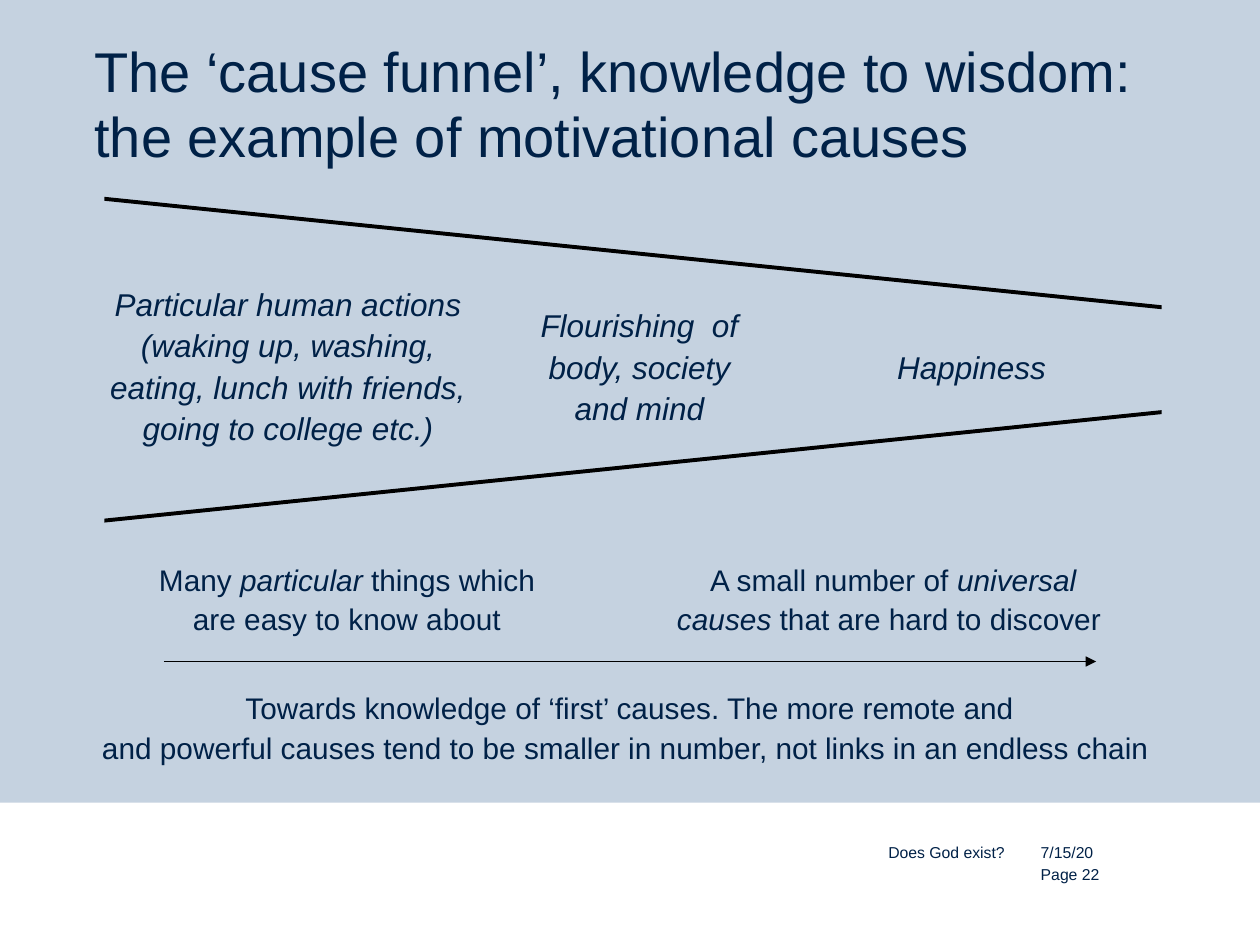
from dataclasses import dataclass

from lxml import etree
from pptx import Presentation
from pptx import util as u
from pptx.dml.color import RGBColor
from pptx.enum import shapes, text
from pptx.oxml import ns

NAVY = RGBColor(0x00, 0x21, 0x47)
PALE_BLUE = RGBColor(0xC5, 0xD2, 0xE0)
WHITE = RGBColor(0xFF, 0xFF, 0xFF)
BLACK = RGBColor(0x00, 0x00, 0x00)

Run = tuple[str, bool]  # wording, italic


@dataclass
class Label:
    """Centred text with default margins."""
    left: float
    top: float
    width: float
    height: float
    size: float
    runs: list[Run]


@dataclass
class PlainText:
    """Left-aligned text without margins, at a fixed line pitch in points."""
    left: float
    top: float
    width: float
    height: float
    size: float
    pitch: float
    wording: str


@dataclass
class Panel:
    left: float
    top: float
    width: float
    height: float
    color: RGBColor


FOOTER_BAND = Panel(0, 6.37, 10, 1.13, WHITE)

# Panels that hide the upright ends of the funnel outline
FUNNEL_ENDS = [
    Panel(9.22, 2.18, 0.19, 1.31, PALE_BLUE),
    Panel(0.67, 1.39, 0.16, 3.7, PALE_BLUE),
]

FUNNEL_CORNERS = [(0.75, 4.14), (9.33, 3.26), (9.33, 2.45), (0.75, 1.57)]

LABELS = [
    Label(0.67, 2.18, 3.23, 1.43, 18, [
        ("Particular human actions (waking up, washing, eating, "
         "lunch with friends, going to college etc.)", True)]),
    Label(4.05, 2.35, 2.05, 1.1, 18,
          [("Flourishing  of body, society and mind", True)]),
    Label(6.57, 2.68, 2.28, 0.43, 18, [("Happiness", True)]),
    Label(1.14, 4.38, 3.23, 0.73, 17, [
        ("Many ", False), ("particular", True),
        (" things which are easy to know about", False)]),
    Label(5.16, 4.38, 3.86, 0.73, 17, [
        ("A small number of ", False), ("universal causes", True),
        (" that are hard to discover ", False)]),
    Label(0.67, 5.4, 8.66, 0.73, 17, [
        ("Towards knowledge of ‘first’ causes. The more remote and\v"
         "and powerful causes tend to be smaller in number, "
         "not links in an endless chain ", False)]),
]

PLAIN_TEXTS = [
    PlainText(0.75, 0.31, 8.5, 1.02, 32, 37,
              "The ‘cause funnel’, knowledge to wisdom:\v"
              "the example of motivational causes"),
    PlainText(7.05, 6.67, 1.17, 0.59, 9, 12, "Does God exist?"),
    PlainText(8.26, 6.67, 1.49, 0.5, 9, 12, "7/15/20"),
    PlainText(8.26, 6.85, 1.49, 0.28, 9, 12, "Page 22"),
]


def frame(item: Label | PlainText | Panel) -> list[u.Length]:
    return [u.Inches(n) for n in (item.left, item.top, item.width, item.height)]


def style_font(paragraph, size: float) -> None:
    paragraph.font.name = "Arial"
    paragraph.font.size = u.Pt(size)
    paragraph.font.color.rgb = NAVY


def add_panel(slide, panel: Panel) -> None:
    shape = slide.shapes.add_shape(shapes.MSO_SHAPE.RECTANGLE, *frame(panel))
    shape.shadow.inherit = False
    shape.fill.solid()
    shape.fill.fore_color.rgb = panel.color
    shape.line.fill.background()


def add_label(slide, label: Label) -> None:
    text_frame = slide.shapes.add_textbox(*frame(label)).text_frame
    text_frame.word_wrap = True
    paragraph = text_frame.paragraphs[0]
    paragraph.alignment = text.PP_ALIGN.CENTER
    paragraph.line_spacing = 1.1
    style_font(paragraph, label.size)
    if len(label.runs) == 1:
        paragraph.text, paragraph.font.italic = label.runs[0]
        return
    for wording, italic in label.runs:
        run = paragraph.add_run()
        run.text = wording
        run.font.italic = italic


def add_plain_text(slide, item: PlainText) -> None:
    text_frame = slide.shapes.add_textbox(*frame(item)).text_frame
    text_frame.word_wrap = True
    text_frame.margin_left = text_frame.margin_right = 0
    text_frame.margin_top = text_frame.margin_bottom = 0
    paragraph = text_frame.paragraphs[0]
    paragraph.text = item.wording
    paragraph.line_spacing = u.Pt(item.pitch)
    style_font(paragraph, item.size)


def add_funnel(slide) -> None:
    corners = [(u.Inches(x), u.Inches(y)) for x, y in FUNNEL_CORNERS]
    builder = slide.shapes.build_freeform(*corners[0])
    builder.add_line_segments(corners[1:], close=True)
    funnel = builder.convert_to_shape()
    funnel.shadow.inherit = False
    funnel.fill.background()
    funnel.line.color.rgb = BLACK
    funnel.line.width = u.Pt(2.25)


def add_arrow(slide, left: float, right: float, y: float) -> None:
    arrow = slide.shapes.add_connector(
        shapes.MSO_CONNECTOR.STRAIGHT,
        u.Inches(left), u.Inches(y), u.Inches(right), u.Inches(y))
    arrow.line.color.rgb = BLACK
    arrow.line.width = u.Pt(0.75)
    line = arrow.line._get_or_add_ln()
    etree.SubElement(line, ns.qn("a:tailEnd"), type="triangle")
    etree.SubElement(arrow._element.spPr, ns.qn("a:effectLst"))


def main() -> None:
    presentation = Presentation()
    presentation.slide_width = u.Inches(10)
    presentation.slide_height = u.Inches(7.5)
    slide = presentation.slides.add_slide(presentation.slide_layouts[6])
    slide.background.fill.solid()
    slide.background.fill.fore_color.rgb = PALE_BLUE

    # Footer band and funnel
    add_panel(slide, FOOTER_BAND)
    add_funnel(slide)
    for panel in FUNNEL_ENDS:
        add_panel(slide, panel)

    # Funnel stages, captions and the arrow between them
    for label in LABELS:
        add_label(slide, label)
    add_arrow(slide, 1.3, 8.7, 5.25)

    # Title and footer
    for item in PLAIN_TEXTS:
        add_plain_text(slide, item)

    presentation.save("out.pptx")


if __name__ == "__main__":
    main()
